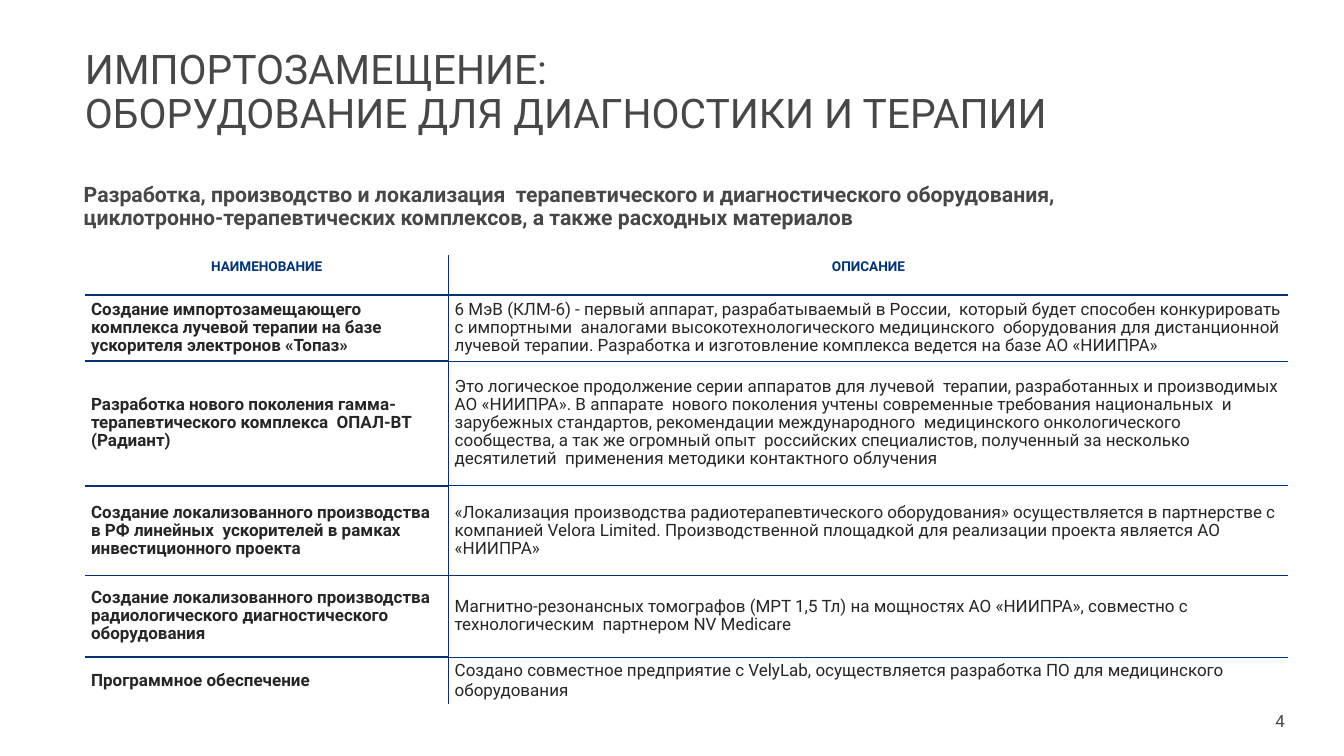
from dataclasses import dataclass
from lxml import etree
from pptx import Presentation
from pptx.dml.color import RGBColor
from pptx.enum.text import MSO_ANCHOR, MSO_AUTO_SIZE, PP_ALIGN
from pptx.oxml.ns import qn
from pptx.util import Inches, Pt

LEFT, CENTER, RIGHT = PP_ALIGN.LEFT, PP_ALIGN.CENTER, PP_ALIGN.RIGHT
TOP, MIDDLE = MSO_ANCHOR.TOP, MSO_ANCHOR.MIDDLE


@dataclass(frozen=True)
class Theme:
    font: str = "Roboto"
    heading: str = "474747"
    accent: str = "003274"
    body: str = "262626"
    title_size: float = 48
    subtitle_size: float = 25
    header_size: float = 16
    body_size: float = 20
    number_size: float = 19.8
    thick: float = 2.25
    thin: float = 1


THEME = Theme()
COLUMN_WIDTHS = (5.95, 13.74)
ROW_HEIGHTS = (0.65, 1.08, 2.04, 1.47, 1.33, 0.77)
HEADERS = ("НАИМЕНОВАНИЕ", "ОПИСАНИЕ")
PROJECTS = (
    ("Создание импортозамещающего комплекса лучевой терапии на базе ускорителя электронов «Топаз»",
     "6 МэВ (КЛМ-6) - первый аппарат, разрабатываемый в России,  который будет способен "
     "конкурировать с импортными  аналогами высокотехнологического медицинского  оборудования "
     "для дистанционной лучевой терапии. Разработка и изготовление комплекса ведется на базе "
     "АО «НИИПРА»"),
    ("Разработка нового поколения гамма-терапевтического комплекса  ОПАЛ-ВТ (Радиант)",
     "Это логическое продолжение серии аппаратов для лучевой  терапии, разработанных и "
     "производимых АО «НИИПРА». В аппарате  нового поколения учтены современные требования "
     "национальных  и зарубежных стандартов, рекомендации международного  медицинского "
     "онкологического сообщества, а так же огромный опыт  российских специалистов, полученный "
     "за несколько десятилетий  применения методики контактного облучения"),
    ("Создание локализованного производства в РФ линейных  ускорителей в рамках "
     "инвестиционного проекта",
     "«Локализация производства радиотерапевтического оборудования» осуществляется в "
     "партнерстве с компанией Velora Limited. Производственной площадкой для реализации "
     "проекта является АО «НИИПРА»"),
    ("Создание локализованного производства  радиологического диагностического  оборудования",
     "Магнитно-резонансных томографов (МРТ 1,5 Тл) на мощностях АО «НИИПРА», совместно с "
     "технологическим  партнером NV Medicare"),
    ("Программное обеспечение",
     "Создано совместное предприятие с VelyLab, осуществляется разработка ПО для медицинского "
     "оборудования"),
)


def write(frame, text, size, color, bold=False, align=LEFT, anchor=TOP, spacing=1.0):
    frame.word_wrap = True
    frame.vertical_anchor = anchor
    paragraph = frame.paragraphs[0]
    paragraph.alignment = align
    paragraph.line_spacing = spacing
    paragraph.space_before = Pt(0)
    for index, line in enumerate(text.split("\n")):
        if index:
            paragraph.add_line_break()
        paragraph.add_run().text = line
    for part in (paragraph, *paragraph.runs):
        part.font.name = THEME.font
        part.font.size = Pt(size)
        part.font.bold = bold
        part.font.color.rgb = RGBColor.from_string(color)


def set_borders(cell, **widths):
    properties = cell._tc.get_or_add_tcPr()
    for side in "LRTB":
        width = widths.get(side, 0)
        line = etree.SubElement(properties, qn(f"a:ln{side}"), w=str(Pt(width)))
        if width:
            fill = etree.SubElement(line, qn("a:solidFill"))
            etree.SubElement(fill, qn("a:srgbClr"), val=THEME.accent)
        else:
            etree.SubElement(line, qn("a:noFill"))
    cell.fill.background()


def add_heading(slide, left, top, width):
    title = slide.shapes.title
    title.left, title.top = Inches(left), Inches(top)
    title.width, title.height = Inches(width), Inches(2.08)
    subtitle = slide.shapes.add_textbox(
        Inches(left - 0.02), Inches(top + 2.21), Inches(width), Inches(1.04))
    for box in (title, subtitle):
        frame = box.text_frame
        frame.auto_size = MSO_AUTO_SIZE.NONE
        frame.margin_left = frame.margin_top = 0
    write(title.text_frame, "ИМПОРТОЗАМЕЩЕНИЕ:\nОБОРУДОВАНИЕ ДЛЯ ДИАГНОСТИКИ И ТЕРАПИИ",
          THEME.title_size, THEME.heading, spacing=0.9)
    write(subtitle.text_frame,
          "Разработка, производство и локализация  терапевтического и диагностического "
          "оборудования,\nциклотронно-терапевтических комплексов, а также расходных материалов",
          THEME.subtitle_size, THEME.heading, bold=True, spacing=0.9)


def add_projects(slide, left, top):
    rows = (HEADERS, *PROJECTS)
    last = len(rows) - 1
    table = slide.shapes.add_table(
        len(rows), len(HEADERS), Inches(left), Inches(top),
        Inches(sum(COLUMN_WIDTHS)), Inches(sum(ROW_HEIGHTS))).table
    table.horz_banding = False
    for column, width in zip(table.columns, COLUMN_WIDTHS):
        column.width = Inches(width)
    for r, (texts, height) in enumerate(zip(rows, ROW_HEIGHTS)):
        table.rows[r].height = Inches(height)
        for c, text in enumerate(texts):
            cell = table.cell(r, c)
            if r == 0:
                write(cell.text_frame, text, THEME.header_size, THEME.accent,
                      bold=True, align=CENTER)
            else:
                write(cell.text_frame, text, THEME.body_size, THEME.body, bold=c == 0,
                      spacing=1.0 if r == last else 0.9)
                cell.vertical_anchor = MIDDLE
            rule = THEME.thin if c else THEME.thick
            above = 0 if r == 0 else THEME.thick if r == 1 else rule
            below = 0 if r == last else THEME.thick if r == 0 else rule
            set_borders(cell, T=above, B=below, **{"L" if c else "R": THEME.thick})


def add_page_number(slide, left, top, width, height):
    number = slide.shapes.add_textbox(Inches(left), Inches(top), Inches(width), Inches(height))
    write(number.text_frame, "4", THEME.number_size, THEME.heading, align=RIGHT, anchor=MIDDLE)


def main():
    deck = Presentation()
    deck.slide_width, deck.slide_height = Inches(21.99), Inches(12.37)
    slide = deck.slides.add_slide(deck.slide_layouts[5])
    add_heading(slide, 1.39, 0.81, 19.08)
    add_projects(slide, 1.39, 4.18)
    add_page_number(slide, 16.17, 11.46, 4.95, 0.66)
    deck.save("out.pptx")


if __name__ == "__main__":
    main()
